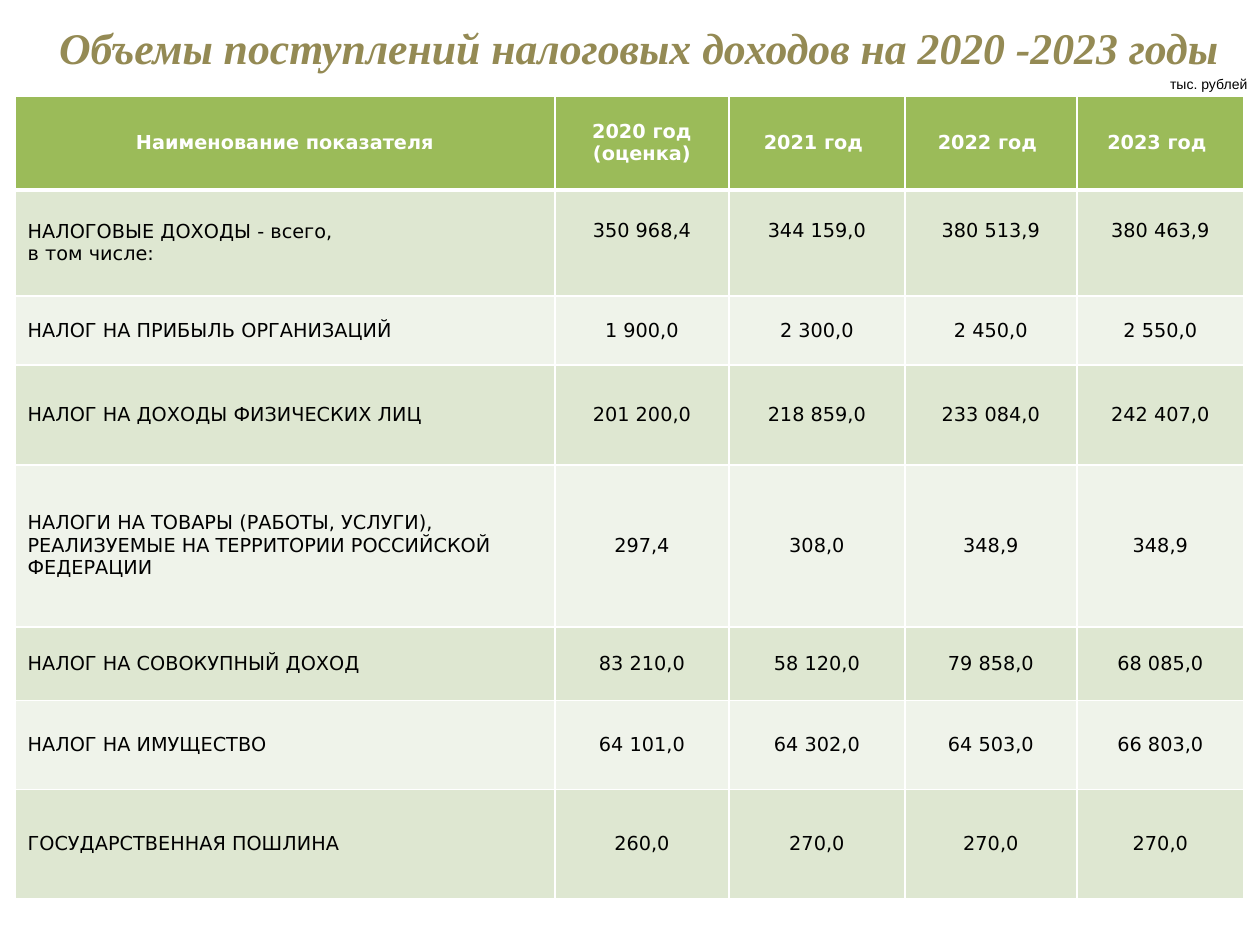
from lxml import etree
from pptx import Presentation
from pptx.dml.color import RGBColor
from pptx.enum.text import MSO_ANCHOR, MSO_AUTO_SIZE, PP_ALIGN
from pptx.oxml.ns import qn
from pptx.util import Emu, Pt

PX = 914400 // 126
LEFT, CENTER, RIGHT = PP_ALIGN.LEFT, PP_ALIGN.CENTER, PP_ALIGN.RIGHT
MIDDLE = MSO_ANCHOR.MIDDLE
NO_AUTOFIT, GROW = MSO_AUTO_SIZE.NONE, MSO_AUTO_SIZE.SHAPE_TO_FIT_TEXT
TITLE_ONLY = 5

COLORS = {
    "title": "948A54",
    "header": "9BBB59",
    "odd": "DEE7D1",
    "even": "EFF3EA",
    "white": "FFFFFF",
    "black": "000000",
}

COLUMN_WIDTHS = [540, 174, 176, 172, 167]
ROW_HEIGHTS = [94, 106, 69, 100, 162, 74, 89, 109]
TOTAL_ROW = 1
TOTAL_LIFT = 25
REVENUES = [
    ["Наименование показателя", "2020 год (оценка)", "2021 год ", "2022 год ", "2023 год "],
    ["НАЛОГОВЫЕ ДОХОДЫ - всего,\nв том числе:", "350 968,4", "344 159,0", "380 513,9", "380 463,9"],
    ["НАЛОГ НА ПРИБЫЛЬ ОРГАНИЗАЦИЙ", "1 900,0", "2 300,0", "2 450,0", "2 550,0"],
    ["НАЛОГ НА ДОХОДЫ ФИЗИЧЕСКИХ ЛИЦ", "201 200,0", "218 859,0", "233 084,0", "242 407,0"],
    ["НАЛОГИ НА ТОВАРЫ (РАБОТЫ, УСЛУГИ), РЕАЛИЗУЕМЫЕ НА ТЕРРИТОРИИ РОССИЙСКОЙ ФЕДЕРАЦИИ",
     "297,4", "308,0", "348,9", "348,9"],
    ["НАЛОГ НА СОВОКУПНЫЙ ДОХОД", "83 210,0", "58 120,0", "79 858,0", "68 085,0"],
    ["НАЛОГ НА ИМУЩЕСТВО", "64 101,0", "64 302,0", "64 503,0", "66 803,0"],
    ["ГОСУДАРСТВЕННАЯ ПОШЛИНА", "260,0", "270,0", "270,0", "270,0"],
]


def px(value):
    return Emu(value * PX)


def rgb(name):
    return RGBColor.from_string(COLORS[name])


def write(frame, text, font, size, color, align, bold=False, italic=False):
    frame.text = text
    for paragraph in frame.paragraphs:
        paragraph.alignment = align
        for run in paragraph.runs:
            run.font.name = font
            run.font.size = Pt(size)
            run.font.bold = bold
            run.font.italic = italic
            run.font.color.rgb = rgb(color)


def place_title(slide, x, y, width, height):
    title = slide.shapes.title
    title.left, title.top, title.width, title.height = map(px, (x, y, width, height))
    frame = title.text_frame
    frame.word_wrap = True
    frame.auto_size = NO_AUTOFIT
    frame.vertical_anchor = MIDDLE
    frame.margin_left = px(111)
    write(frame, "Объемы поступлений налоговых доходов на 2020 -2023 годы",
          "Times New Roman", 25, "title", CENTER, bold=True, italic=True)


def place_unit(slide, x, y, width, height):
    unit = slide.shapes.add_textbox(*map(px, (x, y, width, height)))
    frame = unit.text_frame
    frame.word_wrap = False
    frame.auto_size = GROW
    write(frame, "тыс. рублей", "Arial", 8, "black", RIGHT)


def draw_borders(cell, top, bottom):
    properties = cell._tc.get_or_add_tcPr()
    borders = [("a:lnL", 1), ("a:lnR", 1), ("a:lnT", top), ("a:lnB", bottom)]
    for position, (tag, points) in enumerate(borders):
        line = etree.Element(qn(tag), w=str(Pt(points)))
        fill = etree.SubElement(line, qn("a:solidFill"))
        etree.SubElement(fill, qn("a:srgbClr"), val=COLORS["white"])
        properties.insert(position, line)


def place_revenues(slide, x, y):
    box = (x, y, sum(COLUMN_WIDTHS), sum(ROW_HEIGHTS))
    table = slide.shapes.add_table(
        len(REVENUES), len(COLUMN_WIDTHS), *map(px, box)).table
    for column, width in zip(table.columns, COLUMN_WIDTHS):
        column.width = px(width)
    for row, height in zip(table.rows, ROW_HEIGHTS):
        row.height = px(height)
    for row_index, values in enumerate(REVENUES):
        is_header = row_index == 0
        band = "header" if is_header else "odd" if row_index % 2 else "even"
        for column_index, value in enumerate(values):
            cell = table.cell(row_index, column_index)
            is_label = column_index == 0 and not is_header
            write(cell.text_frame, value, "DejaVu Sans", 11,
                  "white" if is_header else "black",
                  LEFT if is_label else CENTER, bold=is_header)
            cell.vertical_anchor = MIDDLE
            if row_index == TOTAL_ROW and not is_label:
                cell.margin_bottom = px(6 + TOTAL_LIFT)
            cell.fill.solid()
            cell.fill.fore_color.rgb = rgb(band)
            draw_borders(cell, 3 if row_index == 1 else 1, 3 if is_header else 1)


def main():
    presentation = Presentation()
    presentation.slide_width, presentation.slide_height = px(1260), px(945)
    slide = presentation.slides.add_slide(presentation.slide_layouts[TITLE_ONLY])
    place_revenues(slide, 15, 96)
    place_unit(slide, 1155, 69, 105, 30)
    place_title(slide, -115, -1, 1409, 96)
    presentation.save("out.pptx")


if __name__ == "__main__":
    main()
